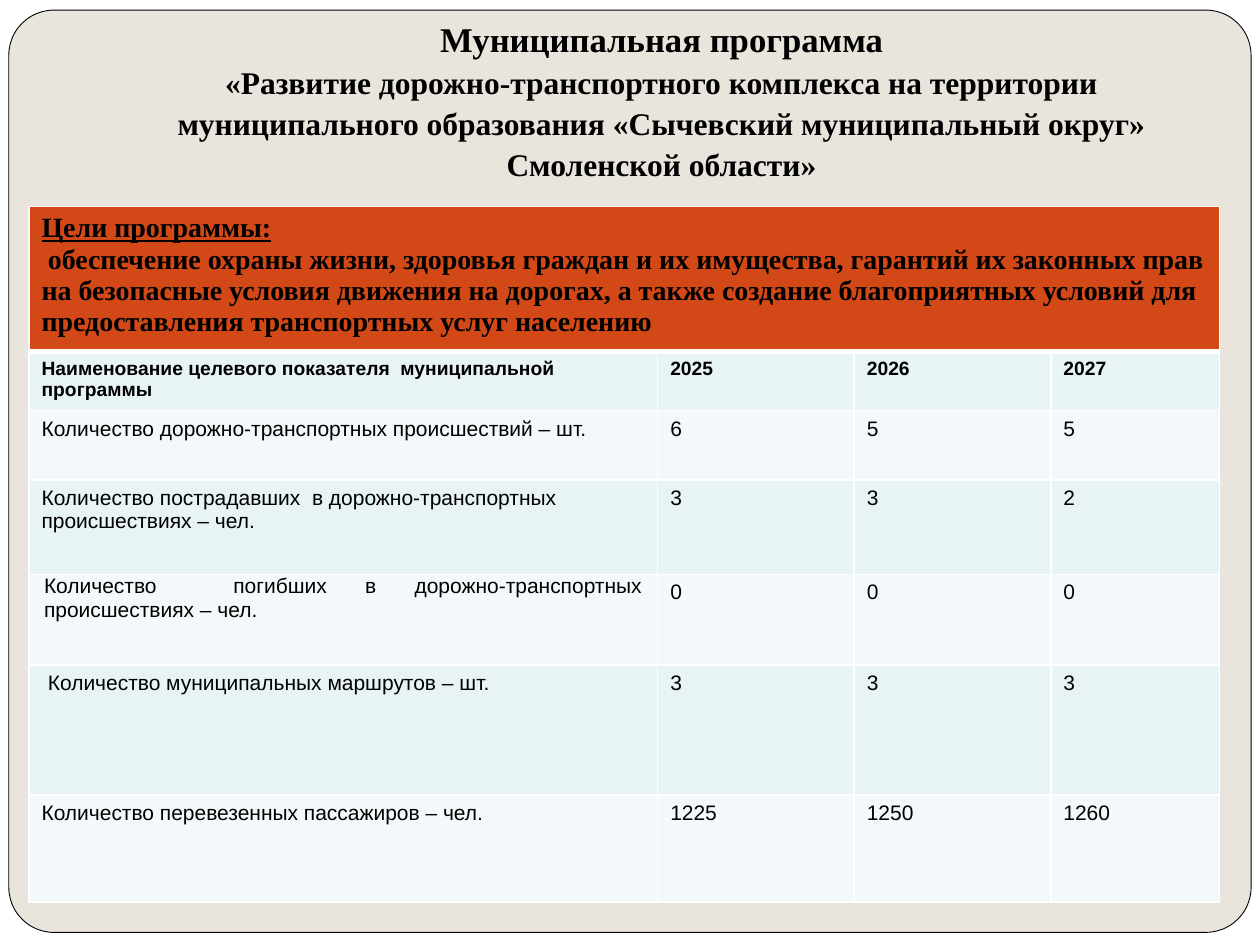
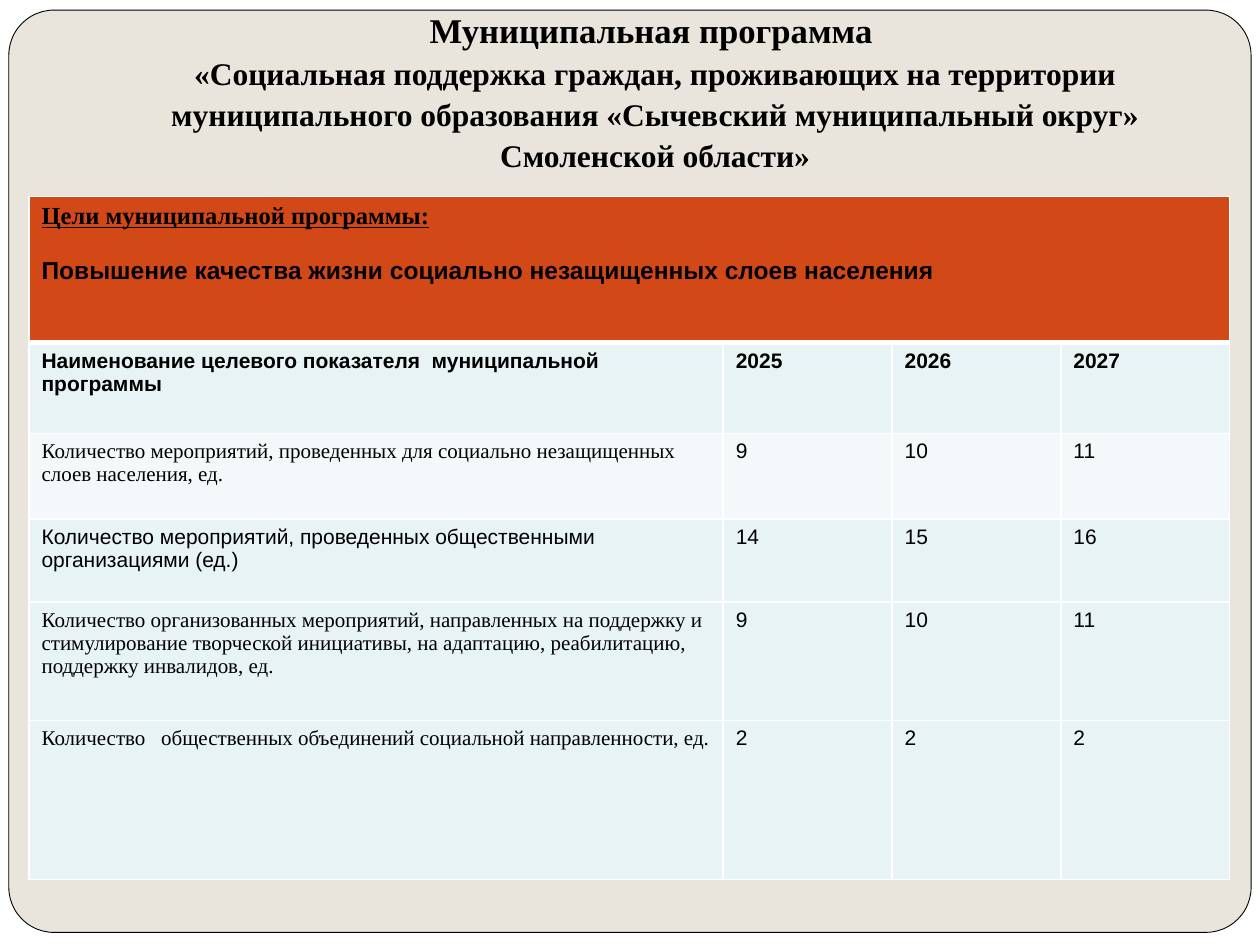
from lxml.etree import SubElement
from pptx import Presentation
from pptx.dml.color import RGBColor
from pptx.enum.shapes import MSO_SHAPE
from pptx.enum.text import MSO_ANCHOR, MSO_AUTO_SIZE, PP_ALIGN
from pptx.oxml.ns import qn
from pptx.util import Inches, Pt

# Shared look
SERIF, SANS = "Times New Roman", "Arial"
BLACK, WHITE, SAND = "000000", "FFFFFF", "E9E5DC"
GOAL_FILL, DARK_BAND, LIGHT_BAND = "D34817", "E7F3F4", "F3F9FA"
HEADINGS = ("Наименование целевого показателя  муниципальной программы",
            "2025", "2026", "2027")

# Content: each indicator is (label, values, label format)
PROGRAMS = [
    {
        "title": ("Муниципальная программа",
                  "«Развитие дорожно-транспортного комплекса на территории "
                  "муниципального образования «Сычевский муниципальный округ» "
                  "Смоленской области»"),
        "title_at": (1, 0.3, 8.5, 1.25),
        "goals": [
            ("Цели программы:", {"size": 16, "underline": True}),
            ("обеспечение охраны жизни, здоровья граждан и их имущества, "
             "гарантий их законных прав на безопасные условия движения на "
             "дорогах, а также создание благоприятных условий для "
             "предоставления транспортных услуг населению",
             {"size": 16, "indent": 0.05}),
        ],
        "heading_size": 11,
        "indicators": [
            ("Количество дорожно-транспортных происшествий – шт.", (6, 5, 5), {}),
            ("Количество пострадавших  в дорожно-транспортных происшествиях – чел.",
             (3, 3, 2), {}),
            ("Количество  погибших в дорожно-транспортных происшествиях – чел.",
             (0, 0, 0), {"align": PP_ALIGN.JUSTIFY, "margins": (0.12, 0)}),
            ("Количество муниципальных маршрутов – шт.", (3, 3, 3), {"indent": 0.05}),
            ("Количество перевезенных пассажиров – чел.", (1225, 1250, 1260), {}),
        ],
        "light_rows": {2, 4, 6},
        "table_at": (0.23, 1.64),
        "columns": (4.99, 1.56, 1.56, 1.34),
        "rows": (1.15, 0.47, 0.55, 0.75, 0.72, 1.03, 0.85),
    },
    {
        "title": ("Муниципальная программа ",
                  "«Социальная поддержка граждан, проживающих на территории\v"
                  "муниципального образования «Сычевский муниципальный округ» "
                  "Смоленской области»"),
        "title_at": (0.55, 0.23, 9.3, 1.25),
        "goals": [
            ("Цели муниципальной программы:", {"size": 14, "underline": True}),
            ("Повышение качества жизни социально незащищенных слоев населения",
             {"size": 14, "font": SANS, "before": 15.5}),
        ],
        "heading_size": 12,
        "indicators": [
            ("Количество мероприятий, проведенных для социально незащищенных "
             "слоев населения, ед.", (9, 10, 11), {"font": SERIF}),
            ("Количество мероприятий, проведенных общественными организациями (ед.)",
             (14, 15, 16), {}),
            ("Количество организованных мероприятий, направленных на поддержку и "
             "стимулирование творческой инициативы, на адаптацию, реабилитацию, "
             "поддержку инвалидов, ед.", (9, 10, 11), {"font": SERIF}),
            ("Количество   общественных объединений социальной направленности, ед.",
             (2, 2, 2), {"font": SERIF}),
        ],
        "light_rows": {2},
        "table_at": (0.23, 1.56),
        "columns": (5.51, 1.34, 1.34, 1.34),
        "rows": (1.16, 0.72, 0.68, 0.66, 0.94, 1.26),
    },
]


def color(value):
    return RGBColor.from_string(value)


def write(para, text, font=SANS, size=12, bold=False, underline=False,
          align=None, indent=0, before=None):
    """Add one formatted span; a vertical tab in the text breaks the line."""
    if indent:
        para._p.get_or_add_pPr().set("indent", str(Inches(indent)))
    if align is not None:
        para.alignment = align
    if before is not None:
        para.space_before = Pt(before)
    for number, line in enumerate(text.split("\v")):
        if number:
            para.add_line_break()
        span = para.add_run()
        span.text = line
        span.font.name, span.font.size = font, Pt(size)
        span.font.bold, span.font.underline = bold, underline
        span.font.color.rgb = color(BLACK)


def add_panel(page, kind, at, fill, line=None):
    panel = page.shapes.add_shape(kind, *map(Inches, at))
    panel.shadow.inherit = False
    panel.fill.solid()
    panel.fill.fore_color.rgb = color(fill)
    if line:
        panel.line.color.rgb = color(line)
        panel.line.width = Pt(0.5)
    else:
        panel.line.fill.background()
    return panel


def set_backdrop(deck, layout, page):
    """Build the rounded sheet once and hand it over to the layout."""
    background = deck.slide_master.background.fill
    background.solid()
    background.fore_color.rgb = color(SAND)
    backing = add_panel(page, MSO_SHAPE.RECTANGLE, (0, 0, 10, 7.5), WHITE)
    sheet = add_panel(page, MSO_SHAPE.ROUNDED_RECTANGLE,
                      (0.07, 0.08, 9.86, 7.32), SAND, BLACK)
    sheet.adjustments[0] = 0.049
    for position, panel in enumerate((backing, sheet), start=2):
        layout.shapes.element.insert(position, panel.element)


def add_title(page, program):
    box = page.shapes.title
    box.left, box.top, box.width, box.height = map(Inches, program["title_at"])
    frame = box.text_frame
    frame.word_wrap, frame.auto_size = True, MSO_AUTO_SIZE.NONE
    frame.vertical_anchor = MSO_ANCHOR.BOTTOM
    frame.margin_left = frame.margin_right = frame.margin_bottom = Inches(0.1)
    frame.margin_top = Inches(0.05)
    para = frame.paragraphs[0]
    para.line_spacing = 1.09
    kind, name = program["title"]
    write(para, kind, font=SERIF, size=19.8, bold=True, align=PP_ALIGN.CENTER)
    para.add_line_break()
    write(para, name, font=SERIF, size=18, bold=True)


def style_cell(cell, row, fill):
    """White borders, thick under the goals row, and a plain fill."""
    widths = {"L": 1, "R": 1, "T": 3 if row == 1 else 1, "B": 3 if row == 0 else 1}
    properties = cell._tc.get_or_add_tcPr()
    for side, width in widths.items():
        border = SubElement(properties, qn(f"a:ln{side}"), w=str(Pt(width)))
        solid = SubElement(border, qn("a:solidFill"))
        SubElement(solid, qn("a:srgbClr"), val=WHITE)
    cell.fill.solid()
    cell.fill.fore_color.rgb = color(fill)


def add_indicator_table(page, program):
    columns, rows = program["columns"], program["rows"]
    place = (*program["table_at"], sum(columns), sum(rows))
    table = page.shapes.add_table(len(rows), len(columns), *map(Inches, place)).table
    table.first_row = table.horz_banding = False
    for column, width in zip(table.columns, columns):
        column.width = Inches(width)
    for number, (row, height) in enumerate(zip(table.rows, rows)):
        row.height = Inches(height)
        band = LIGHT_BAND if number in program["light_rows"] else DARK_BAND
        for cell in row.cells:
            style_cell(cell, number, band if number else GOAL_FILL)

    # Goals across the whole top row
    goals = table.cell(0, 0)
    goals.merge(table.cell(0, len(columns) - 1))
    frame = goals.text_frame
    for number, (text, look) in enumerate(program["goals"]):
        para = frame.add_paragraph() if number else frame.paragraphs[0]
        write(para, text, **{"font": SERIF, "bold": True, **look})

    # Headings, then one row per indicator
    for column, heading in enumerate(HEADINGS):
        write(table.cell(1, column).text_frame.paragraphs[0], heading,
              size=program["heading_size"], bold=True)
    for row, (label, values, look) in enumerate(program["indicators"], start=2):
        look = dict(look)
        cell = table.cell(row, 0)
        if "margins" in look:
            side, end = map(Inches, look.pop("margins"))
            cell.margin_left = cell.margin_right = side
            cell.margin_top = cell.margin_bottom = end
        write(cell.text_frame.paragraphs[0], label, **look)
        for column, value in enumerate(values, start=1):
            write(table.cell(row, column).text_frame.paragraphs[0], str(value))


def main():
    deck = Presentation()
    deck.slide_width, deck.slide_height = Inches(10), Inches(7.5)
    layout = deck.slide_layouts.get_by_name("Title Only")
    for number, program in enumerate(PROGRAMS):
        page = deck.slides.add_slide(layout)
        if number == 0:
            set_backdrop(deck, layout, page)
        add_title(page, program)
        add_indicator_table(page, program)
    deck.save("out.pptx")


if __name__ == "__main__":
    main()
